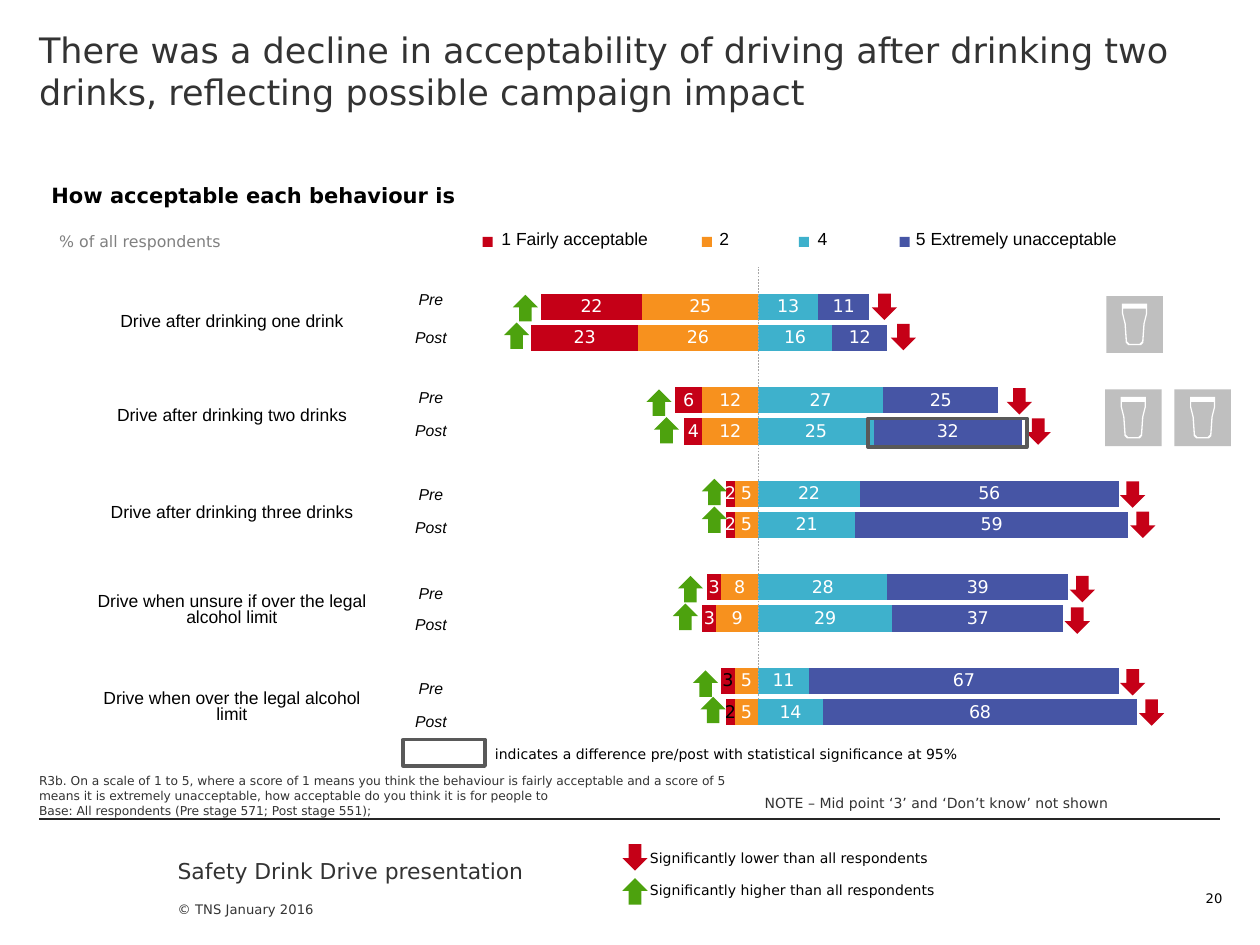
"""Build the drink-drive acceptability slide."""
from lxml import etree
from pptx import Presentation
from pptx.chart.data import CategoryChartData
from pptx.dml.color import RGBColor
from pptx.enum import chart as ch, dml, shapes, text
from pptx.oxml import parse_xml
from pptx.oxml.ns import nsdecls, qn
from pptx.util import Inches, Pt

RED, ORANGE = RGBColor(0xC5, 0x00, 0x17), RGBColor(0xF7, 0x91, 0x1E)
TEAL, BLUE = RGBColor(0x3E, 0xB1, 0xCC), RGBColor(0x46, 0x55, 0xA5)
GREEN = RGBColor(0x4D, 0xA2, 0x0E)
WHITE, BLACK = RGBColor(0xFF, 0xFF, 0xFF), RGBColor(0, 0, 0)
INK, FRAME, RULE = RGBColor(0x33, 0x33, 0x33), RGBColor(0x59, 0x59, 0x59), RGBColor(0x26, 0x26, 0x26)
GREY, MID, TILE = RGBColor(0x80, 0x80, 0x80), RGBColor(0xA6, 0xA6, 0xA6), RGBColor(0xBF, 0xBF, 0xBF)
SANS, ARIAL = "DejaVu Sans", "Arial"
TOP, MIDDLE, BOTTOM = text.MSO_ANCHOR.TOP, text.MSO_ANCHOR.MIDDLE, text.MSO_ANCHOR.BOTTOM
RECT, UP, DOWN = (shapes.MSO_SHAPE.RECTANGLE, shapes.MSO_SHAPE.UP_ARROW, shapes.MSO_SHAPE.DOWN_ARROW)

BEHAVIOURS = ["Drive after drinking one drink", "Drive after drinking two drinks",
              "Drive after drinking three drinks",
              "Drive when unsure if over the legal alcohol limit",
              "Drive when over the legal alcohol limit"]
SERIES = [
    (ORANGE, [-25, -26, None, -12, -12, None, -5, -5, None, -8, -9, None, -5, -5]),
    (RED, [-22, -23, None, -6, -4, None, -2, -2, None, -3, -3, None, -3, -2]),
    (TEAL, [13, 16, None, 27, 25, None, 22, 21, None, 28, 29, None, 11, 14]),
    (BLUE, [11, 12, None, 25, 32, None, 56, 59, None, 39, 37, None, 67, 68]),
]
LEGEND = [("1 Fairly acceptable", 1.73, 3.83, RED), ("2", 0.78, 5.57, ORANGE),
          ("4", 0.78, 6.34, TEAL), ("5 Extremely unacceptable", 2.08, 7.14, BLUE)]
HIGHER = [(4.07, 2.34), (4, 2.56), (5.13, 3.09), (5.19, 3.31), (5.57, 3.8), (5.57, 4.02),
          (5.38, 4.57), (5.34, 4.79), (5.5, 5.32), (5.56, 5.53), (4.94, 6.97)]
LOWER = [(6.92, 2.33), (7.07, 2.57), (7.99, 3.08), (8.14, 3.32), (8.89, 3.82), (8.97, 4.06),
         (8.49, 4.57), (8.45, 4.82), (8.89, 5.31), (9.04, 5.55), (4.94, 6.7)]
GLASSES = [(8.78, 2.35), (8.77, 3.09), (9.32, 3.09)]
GLASS_OUTER = [(0.1, 0), (0.1, 0.08), (0.09, 0.12), (0.08, 0.16), (0.07, 0.31), (0.05, 0.33)]
GLASS_INNER = [(0.09, 0.04), (0.09, 0.08), (0.08, 0.12), (0.07, 0.16), (0.06, 0.3), (0.04, 0.32)]


def style(p, size, color, name=SANS, bold=False, italic=False):
    """Set the font of a paragraph."""
    f = p.font
    f.size, f.name, f.bold, f.italic = Pt(size), name, bold, italic
    f.color.rgb = color


def add_text(s, box, lines, size, color=INK, bold=False, align=None, anchor=TOP,
             insets=(0.1, 0.05, 0.1, 0.05), wrap=True):
    """Add a text box with one paragraph per line."""
    tf = s.shapes.add_textbox(*map(Inches, box)).text_frame
    tf.word_wrap, tf.vertical_anchor = wrap, anchor
    tf.margin_left, tf.margin_top, tf.margin_right, tf.margin_bottom = map(Inches, insets)
    tf.text = "\n".join(lines)
    for p in tf.paragraphs:
        style(p, size, color, bold=bold)
        p.alignment = align


def add_shape(s, kind, box, fill=None, line=None):
    """Add a preset shape with a plain fill or a 2 pt outline."""
    sp = s.shapes.add_shape(kind, *map(Inches, box))
    sp.shadow.inherit = False
    if fill is None:
        sp.fill.background()
    else:
        sp.fill.solid()
        sp.fill.fore_color.rgb = fill
    if line is None:
        sp.line.fill.background()
    else:
        sp.line.color.rgb, sp.line.width = line, Pt(2)


def add_line(s, ends, color, width, dash=None):
    """Add a straight line."""
    c = s.shapes.add_connector(shapes.MSO_CONNECTOR.STRAIGHT, *map(Inches, ends))
    etree.SubElement(c._element.spPr, qn("a:effectLst"))
    c.line.color.rgb, c.line.width = color, Pt(width)
    if dash:
        c.line.dash_style = dash


def add_glass(s, x, y):
    """Add a grey tile with a white glass outline."""
    add_shape(s, RECT, (x, y, 0.45, 0.45), TILE)
    cx, top = x + 0.225, y + 0.06
    contours = []
    for half in (GLASS_OUTER, GLASS_INNER):
        mirrored = half + [(-dx, dy) for dx, dy in reversed(half)]
        contours.append([(Inches(cx + dx), Inches(top + dy)) for dx, dy in mirrored])
    outer, inner = contours
    fb = s.shapes.build_freeform(*outer[0])
    fb.add_line_segments(outer[1:])
    fb.move_to(*inner[0])
    fb.add_line_segments(inner[1:])
    sp = fb.convert_to_shape()
    sp.shadow.inherit = False
    sp.fill.solid()
    sp.fill.fore_color.rgb = WHITE
    sp.line.fill.background()


def add_table(s, box, widths, heights):
    """Add a table without fills or banding."""
    t = s.shapes.add_table(len(heights), len(widths), *map(Inches, box)).table
    t.first_row = t.horz_banding = False
    for col, w in zip(t.columns, widths):
        col.width = Inches(w)
    for row, h in zip(t.rows, heights):
        row.height = Inches(h)
    for cell in t.iter_cells():
        cell.fill.background()
        style(cell.text_frame.paragraphs[0], 9, BLACK, ARIAL)
    return t


def add_behaviours(s):
    """Add the table of behaviours and survey stages."""
    heights = [0.25, 0.32, 0.21] + [0.25, 0.25, 0.27] * 3 + [0.25, 0.25]
    t = add_table(s, (0.58, 2.28, 3.16, 3.54), (2.52, 0.64), heights)
    for cell in t.iter_cells():
        cell.margin_top = cell.margin_bottom = 0
        cell.vertical_anchor = MIDDLE
    for i, behaviour in enumerate(BEHAVIOURS):
        row = 3 * i
        t.cell(row, 0).merge(t.cell(row + 1, 0))
        for r, c, label, size, spacing in ((row, 0, behaviour, 10, 0.8),
                                           (row, 1, "Pre", 9, 0.8 if i == 3 else 0.5),
                                           (row + 1, 1, "Post", 9, 0.8)):
            p = t.cell(r, c).text_frame.paragraphs[0]
            p.text = label
            p.alignment, p.line_spacing = text.PP_ALIGN.CENTER, spacing
            style(p, size, BLACK, ARIAL, italic=c == 1)


def add_legend(s):
    """Add the legend table and its colour keys."""
    t = add_table(s, (3.88, 1.77, 5.37, 0.27), [w for _, w, _, _ in LEGEND], [0.27])
    for cell, (label, _, x, color) in zip(t.iter_cells(), LEGEND):
        cell.text = label
        style(cell.text_frame.paragraphs[0], 10, BLACK, ARIAL)
        add_shape(s, RECT, (x, 1.88, 0.08, 0.08), color)


def add_bars(s):
    """Add the diverging stacked bar chart."""
    cd = CategoryChartData()
    cd.categories = [str(n) for n in range(1, 15)]
    for i, (_, values) in enumerate(SERIES, 1):
        cd.add_series(f"Series {i}", values)
    chart = s.shapes.add_chart(ch.XL_CHART_TYPE.BAR_STACKED, Inches(3.26), Inches(1.37),
                               Inches(6.44), Inches(4.59), cd).chart
    chart.has_legend = chart.has_title = False
    chart.font.name, chart.font.size, chart.font.color.rgb = ARIAL, Pt(18), BLACK
    cat, val = chart.category_axis, chart.value_axis
    cat.reverse_order = True
    val.minimum_scale, val.maximum_scale = -70, 90
    val.has_major_gridlines = cat.visible = val.visible = False
    plot = chart.plots[0]
    plot.gap_width, plot.overlap, plot.vary_by_categories = 19, 100, False
    for ser, (color, values) in zip(plot.series, SERIES):
        ser.format.fill.solid()
        ser.format.fill.fore_color.rgb = color
        dl = ser.data_labels
        dl.show_value, dl.position = True, ch.XL_LABEL_POSITION.CENTER
        dl.number_format_is_linked = False
        dl.number_format = "#,##0;[White]#,##0" if values[0] < 0 else "#,##0"
        dl.font.size, dl.font.name, dl.font.color.rgb = Pt(10), SANS, WHITE
    for i in (12, 13):
        f = plot.series[1].points[i].data_label.font
        f.size, f.name, f.color.rgb = Pt(10), SANS, BLACK
    for label in plot.series[1]._element.iter(qn("c:dLbl")):
        label.find(qn("c:txPr")).addprevious(parse_xml(
            f'<c:numFmt {nsdecls("c")} formatCode="#,##0;#,##0" sourceLinked="0"/>'))
    area = chart._chartSpace.chart.plotArea
    for old in area.findall(qn("c:layout")):
        area.remove(old)
    sizes = "".join(f'<c:{k} val="{v}"/>' for k, v in (
        ("layoutTarget", "inner"), ("xMode", "edge"), ("yMode", "edge"),
        ("x", 0.029), ("y", 0.205), ("w", 0.912), ("h", 0.755)))
    area.insert(0, parse_xml(f'<c:layout {nsdecls("c")}><c:manualLayout>{sizes}'
                             '</c:manualLayout></c:layout>'))


def main():
    """Build and save the slide."""
    prs = Presentation()
    prs.slide_width, prs.slide_height = Inches(10), Inches(7.5)
    s = prs.slides.add_slide(prs.slide_layouts[6])
    flush = (0, 0, 0, 0)
    add_line(s, (0.31, 6.5, 9.68, 6.5), RULE, 0.75)
    add_text(s, (1.41, 6.81, 3.31, 0.21), ["Safety Drink Drive presentation"], 12.5, insets=flush)
    add_text(s, (1.41, 6.92, 2.78, 0.58), ["© TNS January 2016"], 7.5, anchor=BOTTOM,
             insets=(0, 0, 0, 0.31))
    add_text(s, (0.31, 0, 9.69, 1.13), ["There was a decline in acceptability of driving after "
             "drinking two drinks, reflecting possible campaign impact"], 20, insets=(0, 0.23, 0, 0))
    add_bars(s)
    add_behaviours(s)
    add_text(s, (0.31, 6.11, 5.51, 0.41), [
        "R3b. On a scale of 1 to 5, where a score of 1 means you think the behaviour is fairly "
        "acceptable and a score of 5 means it is extremely unacceptable, how acceptable do you "
        "think it is for people to",
        "Base: All respondents (Pre stage 571; Post stage 551);"], 7, anchor=MIDDLE, insets=flush)
    add_line(s, (6.02, 5.55, 6.02, 2.12), MID, 0.25, dml.MSO_LINE.DASH)
    add_text(s, (0.47, 1.84, 1.3, 0.19), ["% of all respondents"], 9, GREY, insets=flush, wrap=False)
    add_text(s, (0.31, 1.4, 3.42, 0.3), ["How acceptable each behaviour is"], 12, BLACK, True,
             wrap=False)
    add_legend(s)
    add_text(s, (9.25, 7.02, 0.55, 0.28), ["20"], 7.5, BLACK, align=text.PP_ALIGN.RIGHT)
    add_text(s, (5.97, 6.26, 2.97, 0.24), ["NOTE – Mid point ‘3’ and ‘Don’t know’ not shown"], 8,
             wrap=False)
    for x, y, w, label in (
            (3.83, 5.87, 3.98, "indicates a difference pre/post with statistical significance at 95%"),
            (5.06, 6.69, 2.59, "Significantly lower than all respondents"),
            (5.06, 6.95, 2.59, "Significantly higher than all respondents")):
        add_text(s, (x, y, w, 0.24), [label], 8, BLACK)
    for kind, color, places in ((UP, GREEN, HIGHER), (DOWN, RED, LOWER)):
        for x, y in places:
            add_shape(s, kind, (x, y, 0.2, 0.21), color)
    for box in ((3.2, 5.87, 0.65, 0.21), (6.89, 3.32, 1.26, 0.23)):
        add_shape(s, RECT, box, line=FRAME)
    for x, y in GLASSES:
        add_glass(s, x, y)
    prs.save("out.pptx")


if __name__ == "__main__":
    main()
